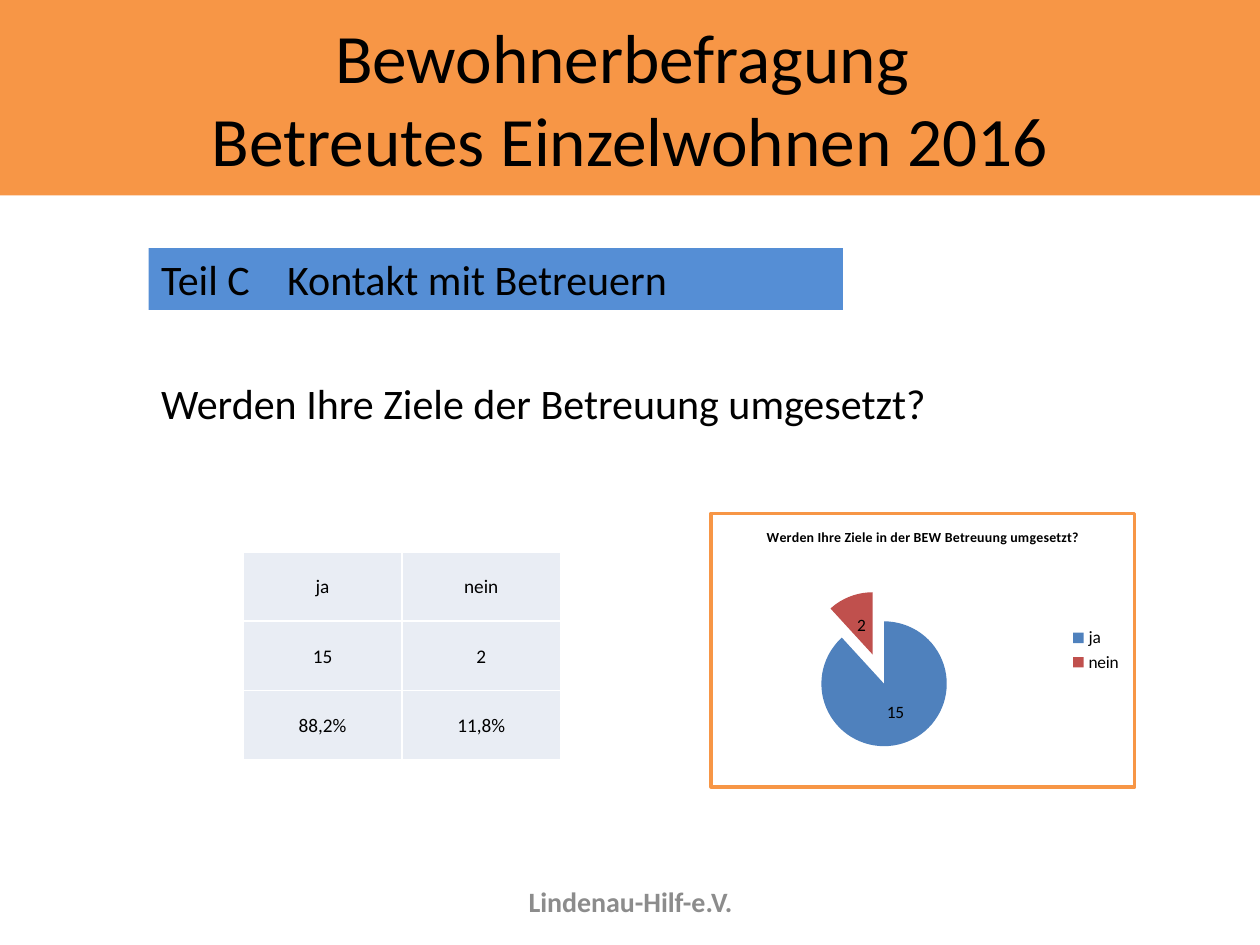
from dataclasses import dataclass

from lxml.etree import SubElement
from pptx import Presentation
from pptx.chart.data import CategoryChartData
from pptx.dml.color import RGBColor
from pptx.enum.chart import XL_CHART_TYPE as ChartType
from pptx.enum.chart import XL_LABEL_POSITION as LabelPosition
from pptx.enum.chart import XL_LEGEND_POSITION as LegendPosition
from pptx.enum.shapes import MSO_SHAPE as Shape
from pptx.enum.text import MSO_ANCHOR as Anchor
from pptx.enum.text import PP_ALIGN as Align
from pptx.oxml import parse_xml
from pptx.oxml.ns import nsdecls, qn
from pptx.util import Inches, Pt


@dataclass(frozen=True)
class Theme:
    font: str = "Calibri"
    text: str = "000000"
    muted: str = "8C8C8C"
    white: str = "FFFFFF"
    orange: str = "F79646"
    section: str = "558ED5"
    cell: str = "E9EDF4"
    slices: tuple = ("4F81BD", "C0504D")
    title_size: float = 39.6
    body_size: float = 24
    footer_size: float = 16
    table_size: float = 11
    chart_size: float = 10
    chart_title_size: float = 8


THEME = Theme()
ANSWERS = ("ja", "nein")
COUNTS = (15, 2)
SHARES = ("88,2%", "11,8%")


def color(value):
    return RGBColor.from_string(value)


def style_font(font, size, value=THEME.text, bold=False):
    for name, setting in {"name": THEME.font, "size": Pt(size), "bold": bold}.items():
        setattr(font, name, setting)
    font.color.rgb = color(value)


def write(frame, text, size, value=THEME.text, bold=False, align=Align.LEFT, anchor=Anchor.MIDDLE):
    """Fill a text frame with one paragraph; a newline becomes a line break."""
    frame.word_wrap = True
    frame.vertical_anchor = anchor
    para = frame.paragraphs[0]
    para.alignment = align
    for number, line in enumerate(text.split("\n")):
        if number:
            para.add_line_break()
        span = para.add_run()
        span.text = line
        style_font(span.font, size, value, bold)


def add_band(page, at, fill, text, size, **format_values):
    band = page.shapes.add_shape(Shape.RECTANGLE, *map(Inches, at))
    band.shadow.inherit = False
    band.fill.solid()
    band.fill.fore_color.rgb = color(fill)
    band.line.fill.background()
    write(band.text_frame, text, size, **format_values)


def add_text(page, at, text, size, **format_values):
    box = page.shapes.add_textbox(*map(Inches, at))
    write(box.text_frame, text, size, **format_values)


def add_borders(cell):
    properties = cell._tc.get_or_add_tcPr()
    for position, side in enumerate(("lnL", "lnR", "lnT", "lnB")):
        border = parse_xml(
            f'<a:{side} {nsdecls("a")} w="{Pt(1)}"><a:solidFill>'
            f'<a:srgbClr val="{THEME.white}"/></a:solidFill></a:{side}>')
        properties.insert(position, border)


def add_result_table(page, at, rows):
    table = page.shapes.add_table(len(rows), len(rows[0]), *map(Inches, at)).table
    margins = {"margin_left": 0.01, "margin_right": 0.01, "margin_top": 0.01, "margin_bottom": 0}
    for row, values in enumerate(rows):
        for column, value in enumerate(values):
            cell = table.cell(row, column)
            for name, margin in margins.items():
                setattr(cell, name, Inches(margin))
            cell.fill.solid()
            cell.fill.fore_color.rgb = color(THEME.cell)
            write(cell.text_frame, str(value), THEME.table_size, align=Align.CENTER)
            cell.vertical_anchor = Anchor.MIDDLE
            add_borders(cell)


def frame_chart(chart):
    """Give the chart area a white fill and an orange border."""
    area = parse_xml(
        f'<c:spPr {nsdecls("c", "a")}><a:solidFill><a:srgbClr val="{THEME.white}"/></a:solidFill>'
        f'<a:ln w="{Pt(2)}"><a:solidFill><a:srgbClr val="{THEME.orange}"/></a:solidFill></a:ln></c:spPr>')
    chart._chartSpace.find(qn("c:chart")).addnext(area)


def place_plot(chart, x, y, w, h):
    """Set the inner plot area as fractions of the chart."""
    plot_area = chart._chartSpace.find(qn("c:chart")).find(qn("c:plotArea"))
    layout = plot_area.find(qn("c:layout"))
    if layout is None:
        layout = parse_xml(f'<c:layout {nsdecls("c")}/>')
        plot_area.insert(0, layout)
    manual = SubElement(layout, qn("c:manualLayout"))
    settings = {"layoutTarget": "inner", "xMode": "edge", "yMode": "edge", "x": x, "y": y, "w": w, "h": h}
    for name, value in settings.items():
        SubElement(manual, qn(f"c:{name}")).set("val", str(value))


def add_answer_pie(page, at, title):
    data = CategoryChartData()
    data.categories = ANSWERS
    data.add_series("Series 1", COUNTS)
    chart = page.shapes.add_chart(ChartType.PIE, *map(Inches, at), data).chart
    style_font(chart.font, THEME.chart_size)
    write(chart.chart_title.text_frame, title, THEME.chart_title_size, bold=True, align=Align.CENTER)
    chart.has_legend = True
    chart.legend.position = LegendPosition.RIGHT
    chart.legend.include_in_layout = False

    plot = chart.plots[0]
    plot.vary_by_categories = True
    series = plot.series[0]
    for number, fill in enumerate(THEME.slices):
        point = series.points[number].format
        point.fill.solid()
        point.fill.fore_color.rgb = color(fill)
    first_point = series._element.find(qn("c:dPt"))
    first_point.addprevious(parse_xml(f'<c:explosion {nsdecls("c")} val="25"/>'))

    labels = series.data_labels
    style_font(labels.font, THEME.chart_size)
    label_settings = {
        "show_value": True, "show_percentage": False, "position": LabelPosition.CENTER,
        "number_format": "#,##0", "number_format_is_linked": False,
    }
    for name, value in label_settings.items():
        setattr(labels, name, value)
    frame_chart(chart)
    place_plot(chart, 0.21, 0.25, 0.37, 0.64)


def main():
    deck = Presentation()
    deck.slide_width, deck.slide_height = Inches(10), Inches(7.5)
    page = deck.slides.add_slide(deck.slide_layouts[6])
    add_band(page, (0, 0, 10, 1.55), THEME.orange,
             "Bewohnerbefragung \nBetreutes Einzelwohnen 2016", THEME.title_size, align=Align.CENTER)
    add_band(page, (1.18, 1.97, 5.51, 0.49), THEME.section,
             "Teil C\tKontakt mit Betreuern", THEME.body_size)
    add_text(page, (3.42, 6.95, 3.17, 0.4), "Lindenau-Hilf-e.V.", THEME.footer_size,
             value=THEME.muted, bold=True, align=Align.CENTER)
    add_text(page, (1.18, 2.95, 8.23, 0.5), "Werden Ihre Ziele der Betreuung umgesetzt?",
             THEME.body_size, anchor=Anchor.TOP)
    add_answer_pie(page, (5.63, 4.06, 3.39, 2.2), "Werden Ihre Ziele in der BEW Betreuung umgesetzt?")
    add_result_table(page, (1.93, 4.38, 2.52, 1.65), (ANSWERS, COUNTS, SHARES))
    deck.save("out.pptx")


if __name__ == "__main__":
    main()
